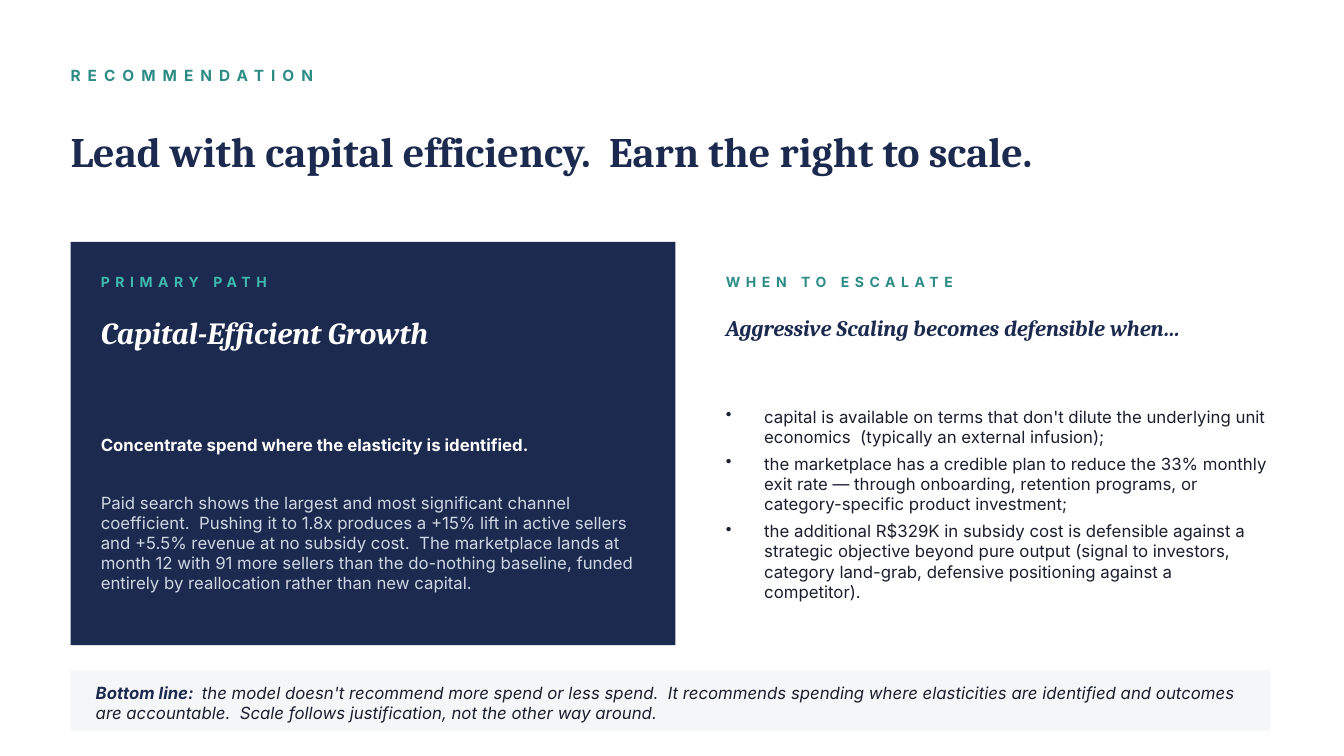
from dataclasses import dataclass

from lxml import etree
from pptx import Presentation
from pptx.dml.color import RGBColor
from pptx.enum.shapes import MSO_SHAPE
from pptx.enum.text import MSO_ANCHOR
from pptx.oxml.ns import qn
from pptx.util import Emu, Pt

RECT = MSO_SHAPE.RECTANGLE
MIDDLE = MSO_ANCHOR.MIDDLE
PX = 9144  # EMU in one px, 100 px to the inch
SERIF, SANS = "Cambria", "Inter"
HANG = 38

COLORS = {
    "white": "FFFFFF",
    "navy": "1B2A4E",
    "teal": "2C8C85",
    "mint": "3FB8AF",
    "mist": "CFD6E4",
    "ink": "1A1F2E",
    "pale": "F5F6F8",
}


@dataclass(frozen=True)
class Box:
    left: int
    top: int
    width: int
    height: int

    def emu(self) -> list[Emu]:
        return [Emu(n * PX) for n in (self.left, self.top, self.width, self.height)]


@dataclass(frozen=True)
class Run:
    text: str
    color: str
    size: int = 12
    font: str = SANS
    bold: bool = False
    italic: bool = False
    track: int = 0  # letter spacing in points


@dataclass(frozen=True)
class Para:
    runs: tuple[Run, ...]
    after: float = 0
    bullet: bool = False


@dataclass(frozen=True)
class Block:
    box: Box
    paras: tuple[Para, ...]


def rgb(name: str) -> RGBColor:
    return RGBColor.from_string(COLORS[name])


def label(text: str, color: str, size: int, track: int) -> tuple[Para, ...]:
    return (Para((Run(text, color, size, bold=True, track=track),)),)


def title(text: str, color: str, size: int, italic: bool = True) -> tuple[Para, ...]:
    return (Para((Run(text, color, size, SERIF, True, italic),)),)


# Filled panels: primary path, bottom line
PANELS = (
    (Box(70, 240, 600, 400), "navy"),
    (Box(70, 665, 1190, 60), "pale"),
)

CASES = (
    "capital is available on terms that don't dilute the underlying unit "
    "economics  (typically an external infusion);",
    "the marketplace has a credible plan to reduce the 33% monthly exit rate "
    "— through onboarding, retention programs, or category-specific product "
    "investment;",
    "the additional R$329K in subsidy cost is defensible against a strategic "
    "objective beyond pure output (signal to investors, category land-grab, "
    "defensive positioning against a competitor).",
)

BLOCKS = (
    # Header
    Block(Box(70, 60, 600, 30), label("RECOMMENDATION", "teal", 11, 5)),
    Block(
        Box(70, 100, 1190, 100),
        title("Lead with capital efficiency.  Earn the right to scale.", "navy", 30, False),
    ),
    # Primary path
    Block(Box(100, 265, 550, 30), label("PRIMARY PATH", "mint", 10, 4)),
    Block(Box(100, 300, 550, 60), title("Capital-Efficient Growth", "white", 22)),
    Block(
        Box(100, 390, 550, 240),
        (
            Para(
                (Run("Concentrate spend where the elasticity is identified.", "white", bold=True),),
                after=26.5,
            ),
            Para(
                (
                    Run(
                        "Paid search shows the largest and most significant channel "
                        "coefficient.  Pushing it to 1.8x produces a +15% lift in active "
                        "sellers and +5.5% revenue at no subsidy cost.  The marketplace "
                        "lands at month 12 with 91 more sellers than the do-nothing "
                        "baseline, funded entirely by reallocation rather than new capital.",
                        "mist",
                    ),
                ),
                after=6,
            ),
        ),
    ),
    # When to escalate
    Block(Box(720, 265, 540, 30), label("WHEN TO ESCALATE", "teal", 10, 4)),
    Block(
        Box(720, 300, 540, 50),
        title("Aggressive Scaling becomes defensible when…", "navy", 16),
    ),
    Block(
        Box(720, 380, 540, 240),
        tuple(Para((Run(case, "ink"),), after=5, bullet=True) for case in CASES),
    ),
    # Bottom line
    Block(
        Box(95, 672, 1150, 50),
        (
            Para(
                (
                    Run("Bottom line:  ", "navy", bold=True, italic=True),
                    Run(
                        "the model doesn't recommend more spend or less spend.  It "
                        "recommends spending where elasticities are identified and "
                        "outcomes are accountable.  Scale follows justification, not "
                        "the other way around.",
                        "ink",
                        italic=True,
                    ),
                )
            ),
        ),
    ),
)


def add_panel(slide, box: Box, color: str) -> None:
    panel = slide.shapes.add_shape(RECT, *box.emu())
    panel.shadow.inherit = False
    panel.fill.solid()
    panel.fill.fore_color.rgb = rgb(color)
    panel.line.fill.background()


def add_run(line, run: Run) -> None:
    part = line.add_run()
    part.text = run.text
    font = part.font
    font.name, font.size = run.font, Pt(run.size)
    font.bold, font.italic = run.bold, run.italic
    font.color.rgb = rgb(run.color)
    if run.track:
        part._r.get_or_add_rPr().set("spc", str(run.track * 100))


def add_block(slide, block: Block) -> None:
    frame = slide.shapes.add_textbox(*block.box.emu()).text_frame
    frame.word_wrap = True
    frame.vertical_anchor = MIDDLE
    frame.margin_left = frame.margin_right = 0
    frame.margin_top = frame.margin_bottom = 0
    for i, para in enumerate(block.paras):
        line = frame.add_paragraph() if i else frame.paragraphs[0]
        line.space_after = Pt(para.after)
        if para.bullet:
            props = line._p.get_or_add_pPr()
            props.set("marL", str(HANG * PX))
            props.set("indent", str(-HANG * PX))
            etree.SubElement(props, qn("a:buChar")).set("char", "•")
        for run in para.runs:
            add_run(line, run)


def main() -> None:
    deck = Presentation()
    deck.slide_width, deck.slide_height = Emu(1333 * PX), Emu(750 * PX)
    slide = deck.slides.add_slide(deck.slide_layouts[6])
    for box, color in PANELS:
        add_panel(slide, box, color)
    for block in BLOCKS:
        add_block(slide, block)
    deck.save("out.pptx")


if __name__ == "__main__":
    main()
